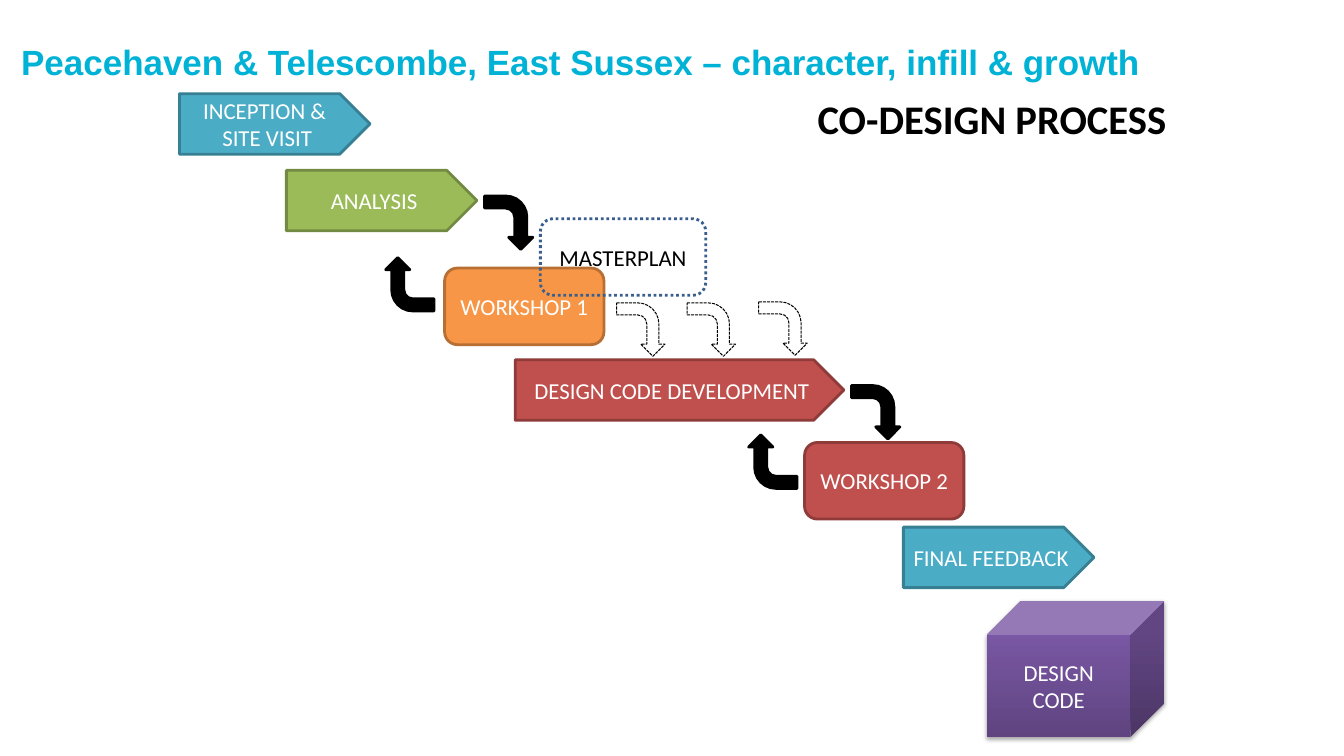
import pptx
import pptx.dml.color
import pptx.enum.dml
import pptx.enum.shapes
import pptx.enum.text
import pptx.oxml
import pptx.oxml.ns
import pptx.util
from dataclasses import dataclass

Inches = pptx.util.Inches
Pt = pptx.util.Pt
PRESET = pptx.enum.shapes.MSO_SHAPE
DASH = pptx.enum.dml.MSO_LINE
ALIGN = pptx.enum.text.PP_ALIGN
ANCHOR = pptx.enum.text.MSO_ANCHOR


@dataclass(frozen=True)
class Theme:
    body_font: str = "Calibri"
    title_font: str = "Arial"
    label_size: float = 16.3
    heading_size: float = 29
    title_size: float = 25
    white: str = "FFFFFF"
    black: str = "000000"
    title: str = "00B2D5"
    # Fill and outline pairs
    teal: tuple = ("4BACC6", "377F92")
    green: tuple = ("9BBB59", "738A42")
    orange: tuple = ("F79646", "B76F34")
    red: tuple = ("C0504D", "8E3B39")
    blue_outline: tuple = (None, "3A5F8C")
    solid_arrow: tuple = ("000000", "000000")
    open_arrow: tuple = (None, "000000")
    # Gradient ends
    purple: tuple = ("5F4480", "7B58A6")


def rgb(value):
    return pptx.dml.color.RGBColor.from_string(value)


class ProcessSlide:
    def __init__(self, slide, theme):
        self.shapes = slide.shapes
        self.theme = theme

    def label(self, frame, lines, color, alignment=ALIGN.CENTER, **font_format):
        settings = {"name": self.theme.body_font,
                    "size": Pt(self.theme.label_size), "bold": False}
        settings.update(font_format)
        frame.word_wrap = True
        frame.text = "\n".join(lines)
        for paragraph in frame.paragraphs:
            paragraph.alignment = alignment
            for attribute, value in settings.items():
                setattr(paragraph.font, attribute, value)
            paragraph.font.color.rgb = rgb(color)

    def outline(self, preset, box, colors, width=2, dash=None):
        fill, line = colors
        part = self.shapes.add_shape(preset, *map(Inches, box))
        part.shadow.inherit = False
        if fill:
            part.fill.solid()
            part.fill.fore_color.rgb = rgb(fill)
        else:
            part.fill.background()
        part.line.color.rgb = rgb(line)
        for attribute, value in {"width": Pt(width), "dash_style": dash}.items():
            setattr(part.line, attribute, value)
        return part

    def stage(self, left, top, lines, colors, width=1.89):
        arrow = self.outline(PRESET.PENTAGON, (left, top, width, 0.6), colors)
        frame = arrow.text_frame
        margins = {"margin_left": 0.08, "margin_right": 0.08}
        for attribute, value in margins.items():
            setattr(frame, attribute, Inches(value))
        frame.vertical_anchor = ANCHOR.MIDDLE
        self.label(frame, lines, self.theme.white)

    def event(self, left, top, text, colors, width=1.58, color=None, dash=None):
        box = self.outline(PRESET.ROUNDED_RECTANGLE, (left, top, width, 0.76),
                           colors, dash=dash)
        box.text_frame.vertical_anchor = ANCHOR.MIDDLE
        self.label(box.text_frame, [text], color or self.theme.white)

    def turn(self, left, top, rotation, colors, **line_format):
        arrow = self.outline(PRESET.BENT_ARROW, (left, top, 0.53, 0.48),
                             colors, **line_format)
        arrow.rotation = rotation

    def outcome(self, box, lines):
        cube = self.shapes.add_shape(PRESET.CUBE, *map(Inches, box))
        cube.line.fill.background()
        cube.fill.gradient()
        cube.fill.gradient_angle = 90
        for stop, color, position in zip(cube.fill.gradient_stops,
                                         self.theme.purple, (0, 0.8)):
            stop.color.rgb = rgb(color)
            stop.position = position
        # Soft shadow below the cube
        cube.shadow.inherit = False
        effects = cube._element.spPr.find(pptx.oxml.ns.qn("a:effectLst"))
        effects.append(pptx.oxml.parse_xml(
            f'<a:outerShdw {pptx.oxml.ns.nsdecls("a")} blurRad="{Pt(3.1)}" '
            f'dist="{Pt(1.8)}" dir="5400000" rotWithShape="0">'
            f'<a:srgbClr val="{self.theme.black}"><a:alpha val="35000"/>'
            '</a:srgbClr></a:outerShdw>'))
        cube.text_frame.vertical_anchor = ANCHOR.MIDDLE
        self.label(cube.text_frame, lines, self.theme.white)

    def heading(self, box, text, color, margin=None, **font_format):
        frame = self.shapes.add_textbox(*map(Inches, box)).text_frame
        if margin is not None:
            for side in ("left", "top", "right", "bottom"):
                setattr(frame, f"margin_{side}", Inches(margin))
        self.label(frame, [text], color, ALIGN.LEFT, bold=True, **font_format)


def main():
    deck = pptx.Presentation()
    deck.slide_width, deck.slide_height = Inches(13.33), Inches(7.5)
    theme = Theme()
    process = ProcessSlide(deck.slides.add_slide(deck.slide_layouts[6]), theme)

    # Stages and workshops, stepping down the slide
    process.stage(1.78, 0.93, ["INCEPTION & ", "SITE VISIT"], theme.teal)
    process.stage(2.84, 1.69, ["ANALYSIS"], theme.green)
    process.stage(5.11, 3.57, ["DESIGN CODE DEVELOPMENT"], theme.red, width=3.26)
    process.event(4.41, 2.66, "WORKSHOP 1", theme.orange)
    process.event(5.36, 2.17, "MASTERPLAN", theme.blue_outline, width=1.64,
                  color=theme.black, dash=DASH.ROUND_DOT)
    process.event(7.98, 4.39, "WORKSHOP 2", theme.red)
    process.stage(8.96, 5.23, ["FINAL FEEDBACK"], theme.teal)

    # Loops into and back from each workshop
    for left, top, rotation in ((4.78, 1.97, 90), (3.8, 2.58, 270),
                                (8.42, 3.85, 90), (7.4, 4.34, 270)):
        process.turn(left, top, rotation, theme.solid_arrow)

    # Masterplan feeding the design code
    for left, top in ((6.09, 3.03), (6.79, 3.03), (7.5, 3.02)):
        process.turn(left, top, 90, theme.open_arrow, width=0.75,
                     dash=DASH.SQUARE_DOT)

    # Final product
    process.outcome((9.79, 5.96, 1.76, 1.35), ["DESIGN CODE"])

    # Headings
    process.heading((8.01, 0.88, 4.61, 0.59), "CO-DESIGN PROCESS", theme.black,
                    size=Pt(theme.heading_size))
    process.heading((0.21, 0.4, 12.91, 0.87),
                    "Peacehaven & Telescombe, East Sussex – character, infill & growth",
                    theme.title, margin=0, name=theme.title_font,
                    size=Pt(theme.title_size))

    deck.save("out.pptx")


if __name__ == "__main__":
    main()
